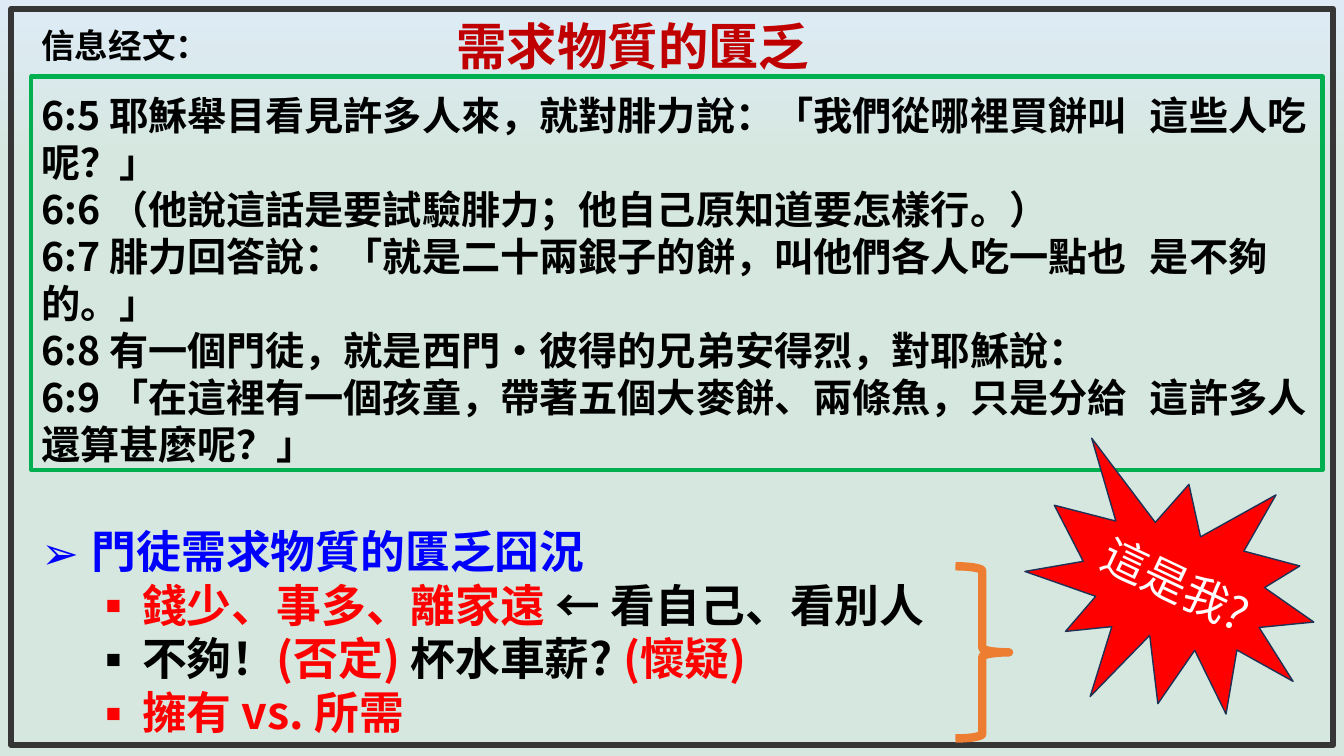
import pptx
import pptx.dml.color
import pptx.enum.shapes
import pptx.enum.text
import pptx.oxml.ns
import pptx.util
from lxml import etree

Cm = pptx.util.Cm
Pt = pptx.util.Pt
RGBColor = pptx.dml.color.RGBColor
SHAPE = pptx.enum.shapes.MSO_SHAPE
ANCHOR = pptx.enum.text.MSO_ANCHOR
ALIGN = pptx.enum.text.PP_ALIGN

FONT = "Noto Sans CJK SC"
BLACK = RGBColor(0x00, 0x00, 0x00)
WHITE = RGBColor(0xFF, 0xFF, 0xFF)
RED = RGBColor(0xFF, 0x00, 0x00)
DARK_RED = RGBColor(0xC0, 0x00, 0x00)
BLUE = RGBColor(0x00, 0x00, 0xFF)
GREEN = RGBColor(0x00, 0xB0, 0x50)
ORANGE = RGBColor(0xED, 0x7D, 0x31)
CHARCOAL = RGBColor(0x36, 0x36, 0x36)
NAVY = RGBColor(0x1E, 0x32, 0x56)
SKY = RGBColor(0xDE, 0xEB, 0xF7)
MINT = RGBColor(0xD5, 0xE7, 0xDE)

LINE_HEIGHT = 1.2

VERSES = [
    "6:5 耶穌舉目看見許多人來，就對腓力說：「我們從哪裡買餅叫\t這些人吃\t呢？」",
    "6:6 （他說這話是要試驗腓力；他自己原知道要怎樣行。）",
    "6:7 腓力回答說：「就是二十兩銀子的餅，叫他們各人吃一點也\t是不夠\t的。」",
    "6:8 有一個門徒，就是西門•彼得的兄弟安得烈，對耶穌說：",
    "6:9 「在這裡有一個孩童，帶著五個大麥餅、兩條魚，只是分給\t這許多人\t還算甚麼呢？」",
]

# Level, bullet, coloured spans
POINTS = [
    (0, "➢", [("門徒需求物質的匱乏囧況", BLUE)]),
    (1, "▪", [("錢少、事多、離家遠 ", RED), ("← 看自己、看別人", BLACK)]),
    (1, "▪", [("不夠！", BLACK), ("(否定) ", RED), ("杯水車薪?", BLACK), (" (懷疑)", RED)]),
    (1, "▪", [("擁有 vs. 所需", RED)]),
]


def place(box, left, top, width, height):
    box.left, box.top, box.width, box.height = Cm(left), Cm(top), Cm(width), Cm(height)


def add_span(para, text, size, color=BLACK, bold=True):
    span = para.add_run()
    span.text = text
    span.font.name = FONT
    span.font.size = Pt(size)
    span.font.bold = bold
    span.font.color.rgb = color
    east_asian = etree.SubElement(span.font._element, pptx.oxml.ns.qn("a:ea"))
    east_asian.set("typeface", FONT)


def set_frame(box, anchor=ANCHOR.TOP, wrap=True, top=0.13, side=0.25):
    frame = box.text_frame
    frame.word_wrap = wrap
    frame.auto_size = pptx.enum.text.MSO_AUTO_SIZE.NONE
    frame.vertical_anchor = anchor
    frame.margin_top, frame.margin_bottom = Cm(top), Cm(0.13)
    frame.margin_left, frame.margin_right = Cm(side), Cm(0)
    return frame


def next_para(frame, number, align=ALIGN.LEFT, size=None):
    para = frame.add_paragraph() if number else frame.paragraphs[0]
    para.alignment = align
    para.space_before = para.space_after = Pt(0)
    if size:
        para.line_spacing = Pt(size * LINE_HEIGHT)
    return para


def set_bullet(para, symbol, level):
    para.level = level
    properties = para._p.get_or_add_pPr()
    properties.set("marL", str(Cm(1.27 * (level + 1))))
    properties.set("indent", str(Cm(-1.27)))
    font = etree.SubElement(properties, pptx.oxml.ns.qn("a:buFont"))
    font.set("typeface", "Wingdings" if symbol == "" else FONT)
    bullet = etree.SubElement(properties, pptx.oxml.ns.qn("a:buChar"))
    bullet.set("char", symbol)


def add_outline(page, kind, bounds, color, weight, fill=None):
    shape = page.shapes.add_shape(kind, *(Cm(length) for length in bounds))
    shape.shadow.inherit = False
    shape.line.color.rgb = color
    shape.line.width = Pt(weight)
    if fill is None:
        shape.fill.background()
    else:
        shape.fill.solid()
        shape.fill.fore_color.rgb = fill
    return shape


def paint_background(page):
    fill = page.background.fill
    fill.gradient()
    fill.gradient_angle = 270
    for stop, position, color in zip(fill.gradient_stops, (0, 0.23), (SKY, MINT)):
        stop.position = position
        stop.color.rgb = color


def fill_title(page):
    title = page.shapes.title
    place(title, 8.18, 0.38, 15.54, 1.52)
    para = next_para(set_frame(title, ANCHOR.MIDDLE, side=0), 0, ALIGN.CENTER)
    add_span(para, "需求物質的匱乏", 36, DARK_RED)


def fill_points(page):
    body = page.placeholders[1]
    place(body, 0.79, 13.06, 24, 5.6)
    frame = set_frame(body)
    for number, (level, symbol, spans) in enumerate(POINTS):
        para = next_para(frame, number, size=32)
        set_bullet(para, symbol, level)
        for text, color in spans:
            add_span(para, text, 32, color)


def add_label(page):
    label = page.shapes.add_textbox(Cm(0.79), Cm(0.5), Cm(6), Cm(1.3))
    add_span(next_para(set_frame(label), 0, size=24), "信息经文：", 24)


def add_verses(page):
    box = add_outline(page, SHAPE.RECTANGLE, (0.79, 1.93, 32.54, 9.91), GREEN, 3)
    frame = set_frame(box, top=0.38)
    for number, verse in enumerate(VERSES):
        add_span(next_para(frame, number, size=28), verse, 28)


def add_burst(page):
    burst = add_outline(page, SHAPE.EXPLOSION1, (25.93, 11.61, 7.34, 6.6), NAVY, 1, RED)
    burst.rotation = 25.4
    frame = set_frame(burst, ANCHOR.MIDDLE, wrap=False, side=0)
    add_span(next_para(frame, 0, ALIGN.CENTER), "這是我?", 32, WHITE, bold=False)


def main():
    deck = pptx.Presentation()
    deck.slide_width, deck.slide_height = Cm(33.87), Cm(19.05)
    page = deck.slides.add_slide(deck.slide_layouts[1])
    paint_background(page)

    # Scripture and headings
    fill_title(page)
    fill_points(page)
    add_label(page)
    add_verses(page)

    # Page frame, callout and brace
    add_outline(page, SHAPE.RECTANGLE, (0.28, 0.23, 33.32, 18.54), CHARCOAL, 4.5)
    add_burst(page)
    add_outline(page, SHAPE.RIGHT_BRACE, (24.08, 14.27, 1.35, 4.34), ORANGE, 6)

    deck.save("out.pptx")


if __name__ == "__main__":
    main()
